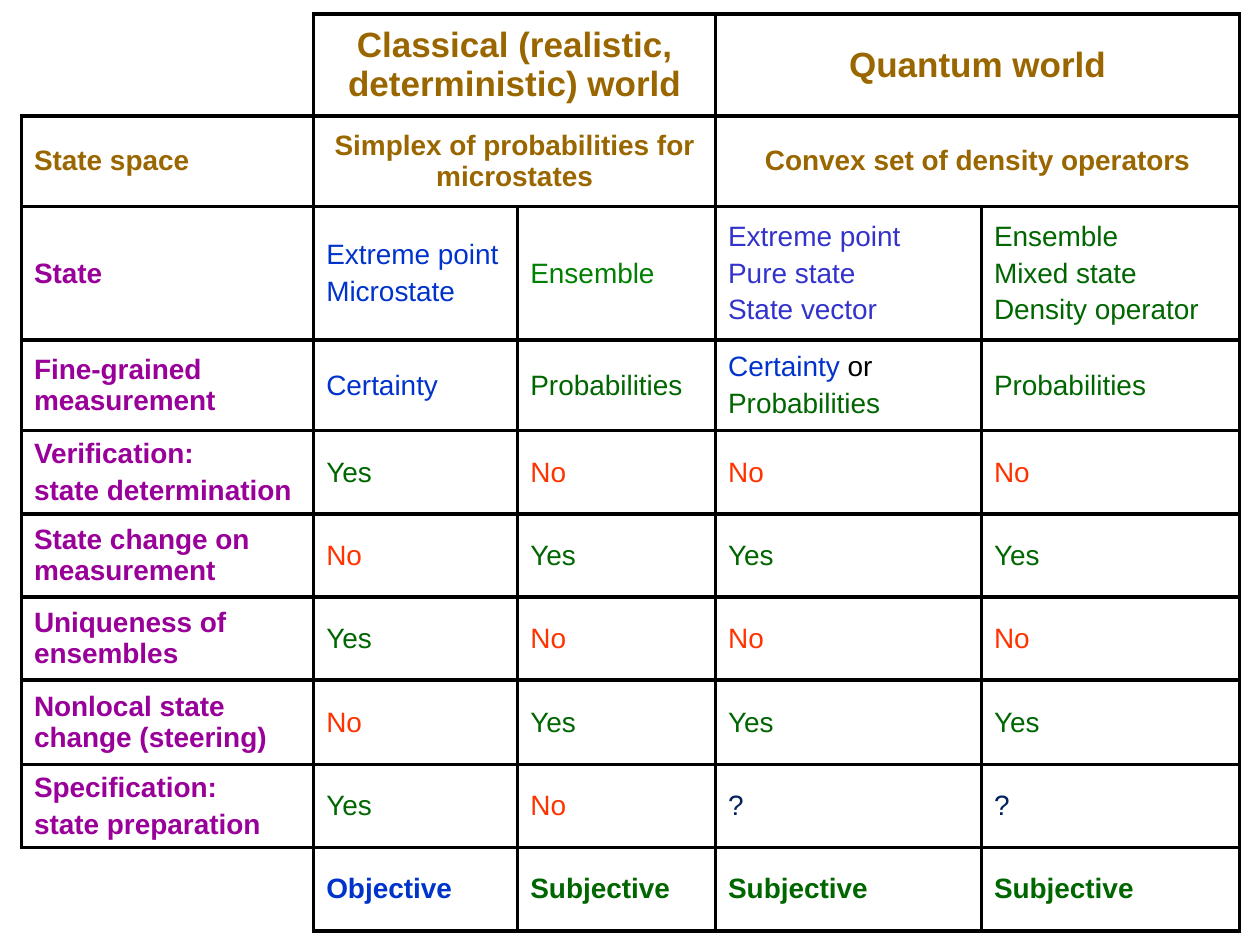
"""Build a slide with a table comparing the classical and quantum worlds."""
from lxml.etree import SubElement
from pptx import Presentation
from pptx.dml.color import RGBColor
from pptx.enum.text import MSO_ANCHOR, PP_ALIGN
from pptx.oxml.ns import qn
from pptx.util import Inches, Pt

BROWN = RGBColor(0x99, 0x66, 0x00)
PURPLE = RGBColor(0x99, 0x00, 0x99)
BLUE = RGBColor(0x00, 0x33, 0xCC)
INDIGO = RGBColor(0x33, 0x33, 0xCC)
GREEN = RGBColor(0x00, 0x66, 0x00)
LIME = RGBColor(0x00, 0x80, 0x00)
RED = RGBColor(0xFF, 0x33, 0x00)
NAVY = RGBColor(0x00, 0x20, 0x60)
BLACK = RGBColor(0, 0, 0)

YES, NO, ASK = ("Yes", GREEN), ("No", RED), ("?", NAVY)
SUBJ = ("Subjective", GREEN)
ODDS = ("Probabilities", GREEN)

WIDTHS = [2.32, 1.62, 1.57, 2.11, 2.05]
HEIGHTS = [0.81, 0.72, 1.06, 0.72, 0.66, 0.66, 0.66, 0.67, 0.66, 0.66]
HEADS = [
    ("", "Classical (realistic, deterministic) world", "Quantum world"),
    ("State space", "Simplex of probabilities for microstates",
     "Convex set of density operators"),
]
BODY = [
    ("State", [("Extreme point\nMicrostate", BLUE)], [("Ensemble", LIME)],
     [("Extreme point\nPure state\nState vector", INDIGO)],
     [("Ensemble\nMixed state\nDensity operator", GREEN)]),
    ("Fine-grained measurement", [("Certainty", BLUE)], [ODDS],
     [("Certainty ", BLUE), ("or\n", BLACK), ODDS], [ODDS]),
    ("Verification:\nstate determination", [YES], [NO], [NO], [NO]),
    ("State change on measurement", [NO], [YES], [YES], [YES]),
    ("Uniqueness of ensembles", [YES], [NO], [NO], [NO]),
    ("Nonlocal state change (steering)", [NO], [YES], [YES], [YES]),
    ("Specification:\nstate preparation", [YES], [NO], [ASK], [ASK]),
    ("", [("Objective", BLUE)], [SUBJ], [SUBJ], [SUBJ]),
]


def border(cell, sides):
    props = cell._tc.get_or_add_tcPr()
    for side in "LRTB":
        line = SubElement(props, qn("a:ln" + side), w=str(Pt(2.25)))
        if side in sides:
            fill = SubElement(line, qn("a:solidFill"))
            SubElement(fill, qn("a:srgbClr"), val=str(BLACK))
        else:
            SubElement(line, qn("a:noFill"))
    cell.fill.background()


def write(cell, parts, bold=False, size=16, align=PP_ALIGN.LEFT):
    cell.vertical_anchor = MSO_ANCHOR.MIDDLE
    frame = cell.text_frame
    para = frame.paragraphs[0]
    para.alignment = align
    for text, color in parts:
        for i, piece in enumerate(text.split("\n")):
            if i:
                para = frame.add_paragraph()
                para.alignment = align
                para.space_before = Pt(size * 0.2)
            if piece:
                run = para.add_run()
                run.text = piece
                font = run.font
                font.name, font.size, font.bold = "Arial", Pt(size), bold
                font.color.rgb = color


def main():
    deck = Presentation()
    deck.slide_width, deck.slide_height = Inches(10), Inches(7.5)
    slide = deck.slides.add_slide(deck.slide_layouts[6])
    table = slide.shapes.add_table(
        len(HEIGHTS), len(WIDTHS), Inches(0.17), Inches(0.11),
        Inches(sum(WIDTHS)), Inches(sum(HEIGHTS))).table
    table.first_row = table.horz_banding = False
    for col, width in zip(table.columns, WIDTHS):
        col.width = Inches(width)
    for row, height in zip(table.rows, HEIGHTS):
        row.height = Inches(height)

    last = len(HEIGHTS) - 1
    corners = {(0, 0): "RB", (last, 0): "RT"}
    for r in range(len(HEIGHTS)):
        for c in range(len(WIDTHS)):
            border(table.cell(r, c), corners.get((r, c), "LRTB"))

    for r, (label, *worlds) in enumerate(HEADS):
        write(table.cell(r, 0), [(label, BROWN)], True)
        for c, text in zip((1, 3), worlds):
            table.cell(r, c).merge(table.cell(r, c + 1))
            write(table.cell(r, c), [(text, BROWN)], True,
                  16 if r else 20, PP_ALIGN.CENTER)
    for r, (label, *cells) in enumerate(BODY, len(HEADS)):
        write(table.cell(r, 0), [(label, PURPLE)], True)
        for c, parts in enumerate(cells, 1):
            write(table.cell(r, c), parts, r == last)
    deck.save("out.pptx")


if __name__ == "__main__":
    main()
